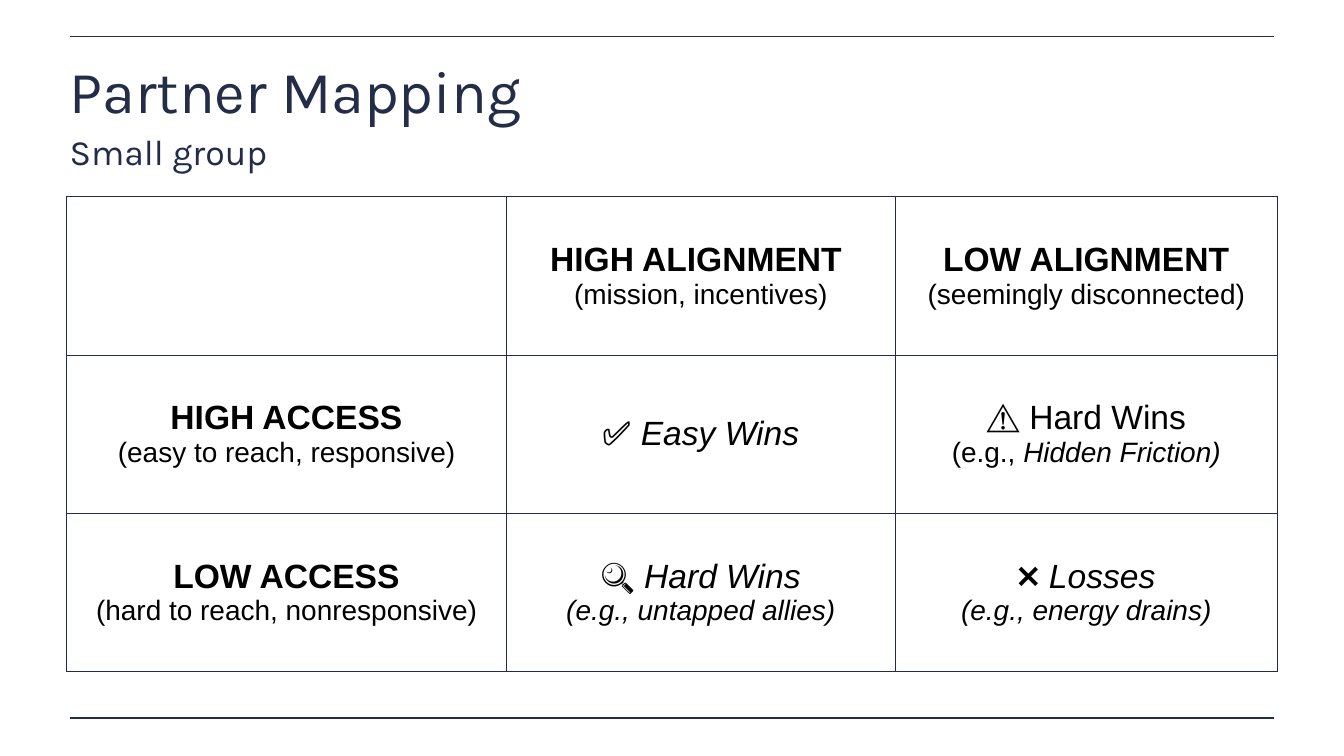
from lxml import etree
from pptx import Presentation
from pptx.dml.color import RGBColor
from pptx.enum import shapes, text
from pptx.oxml import ns
from pptx.util import Inches, Pt

COLORS = {"rule": "232D48", "navy": "222C4A", "black": "000000", "white": "FFFFFF"}
LARGE, SMALL = 48, 40

# Each cell is a list of lines; each line is (size, [(words, style), ...])
MATRIX = [
    [
        [],
        [(LARGE, [("HIGH ALIGNMENT ", "bold")]), (SMALL, [("(mission, incentives)", "")])],
        [(LARGE, [("LOW ALIGNMENT", "bold")]), (SMALL, [("(seemingly disconnected)", "")])],
    ],
    [
        [(LARGE, [("HIGH ACCESS", "bold")]), (SMALL, [("(easy to reach, responsive)", "")])],
        [(LARGE, [("✅ ", ""), ("Easy Wins", "italic")])],
        [(LARGE, [("⚠️ Hard Wins", "")]),
         (SMALL, [("(e.g., ", ""), ("Hidden Friction)", "italic")])],
    ],
    [
        [(LARGE, [("LOW ACCESS", "bold")]), (SMALL, [("(hard to reach, nonresponsive)", "")])],
        [(LARGE, [("🔍 ", ""), ("Hard Wins", "italic")]),
         (SMALL, [("(e.g., untapped allies)", "italic")])],
        [(LARGE, [("❌ ", ""), ("Losses", "italic")]),
         (SMALL, [("(e.g., energy drains)", "italic")])],
    ],
]


def color(name):
    return RGBColor.from_string(COLORS[name])


def style_font(font, name, size, shade):
    font.name, font.size = name, Pt(size)
    font.color.rgb = color(shade)


def add_rule(page, left, top, width):
    rule = page.shapes.add_connector(
        shapes.MSO_CONNECTOR.STRAIGHT,
        Inches(left), Inches(top), Inches(left + width), Inches(top))
    rule.line.color.rgb = color("rule")
    rule.line.width = Pt(2)
    etree.SubElement(rule._element.spPr, ns.qn("a:effectLst"))


def add_heading(page, left, top, width, height, words, size, shade):
    box = page.shapes.add_textbox(Inches(left), Inches(top), Inches(width), Inches(height))
    frame = box.text_frame
    frame.word_wrap = True
    frame.margin_left = frame.margin_right = Inches(0.06)
    frame.margin_top = frame.margin_bottom = Inches(0.06)
    frame.text = words
    para = frame.paragraphs[0]
    para.line_spacing = 0.8
    style_font(para.runs[0].font, "Karla", size, shade)


def add_borders(cell):
    properties = cell._tc.get_or_add_tcPr()
    for position, side in enumerate(("lnL", "lnR", "lnT", "lnB")):
        border = etree.Element(ns.qn(f"a:{side}"), w=str(Pt(1)))
        fill = etree.SubElement(border, ns.qn("a:solidFill"))
        etree.SubElement(fill, ns.qn("a:srgbClr"), val=COLORS["navy"])
        properties.insert(position, border)


def fill_cell(cell, lines):
    cell.fill.background()
    add_borders(cell)
    cell.vertical_anchor = text.MSO_ANCHOR.MIDDLE
    frame = cell.text_frame
    for index, (size, spans) in enumerate(lines):
        para = frame.add_paragraph() if index else frame.paragraphs[0]
        para.alignment = text.PP_ALIGN.CENTER
        for words, style in spans:
            span = para.add_run()
            span.text = words
            style_font(span.font, "Arial", size, "black")
            span.font.bold = style == "bold"
            span.font.italic = style == "italic"


def add_matrix(page, left, top, column_widths, row_height):
    rows = len(MATRIX)
    table = page.shapes.add_table(
        rows, len(column_widths), Inches(left), Inches(top),
        Inches(sum(column_widths)), Inches(rows * row_height)).table
    table.first_row = table.horz_banding = False
    for column, width in zip(table.columns, column_widths):
        column.width = Inches(width)
    for r, entries in enumerate(MATRIX):
        table.rows[r].height = Inches(row_height)
        for c, lines in enumerate(entries):
            fill_cell(table.cell(r, c), lines)


def main():
    deck = Presentation()
    deck.slide_width, deck.slide_height = Inches(26.67), Inches(15)
    page = deck.slides.add_slide(deck.slide_layouts[6])
    page.background.fill.solid()
    page.background.fill.fore_color.rgb = color("white")

    # Rules at the top and bottom of the page
    for top in (0.72, 14.25):
        add_rule(page, 1.38, top, 23.91)

    # Title and subtitle
    add_heading(page, 1.32, 1.29, 23.91, 1.65, "Partner Mapping", 85, "rule")
    add_heading(page, 1.32, 2.68, 24.03, 0.87, "Small group", 50.9, "navy")

    # Access and alignment matrix
    add_matrix(page, 1.32, 3.9, (8.73, 7.71, 7.59), 3.14)
    deck.save("out.pptx")


if __name__ == "__main__":
    main()
